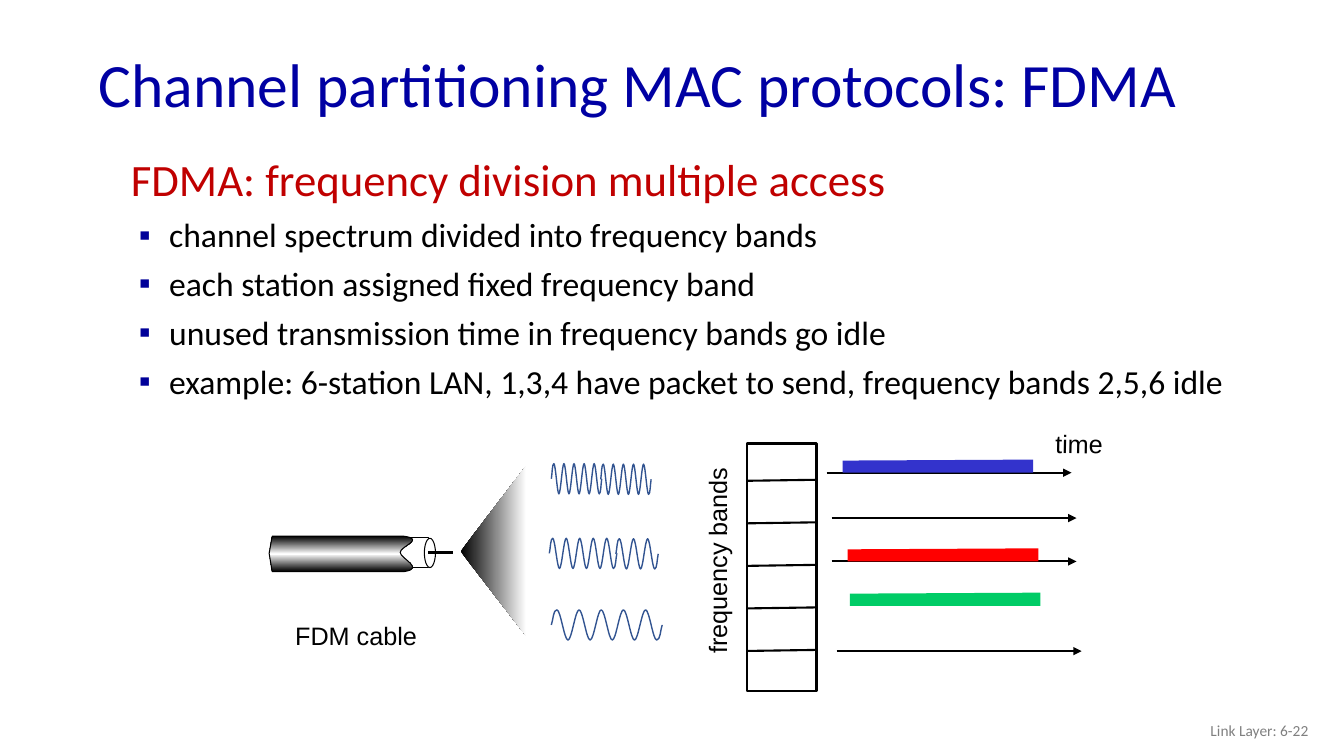
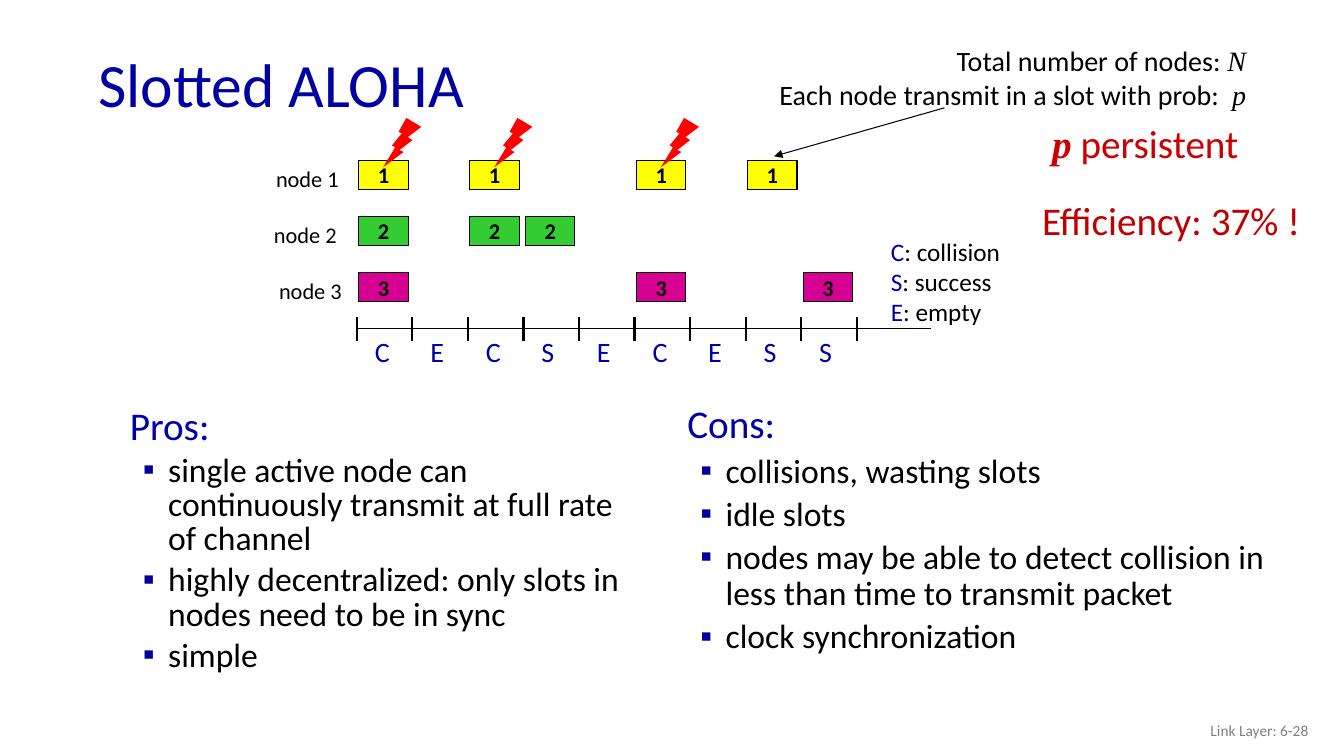
from copy import deepcopy
from dataclasses import dataclass

from lxml.etree import SubElement
from pptx import Presentation
from pptx.dml.color import RGBColor
from pptx.enum.shapes import MSO_CONNECTOR, MSO_SHAPE
from pptx.enum.text import MSO_ANCHOR, MSO_AUTO_SIZE, PP_ALIGN
from pptx.oxml.ns import qn
from pptx.util import Inches, Pt


@dataclass(frozen=True)
class Theme:
    title: str = "0000A3"
    blue: str = "0000A8"
    mark: str = "000099"
    red: str = "C00000"
    rose: str = "CC0000"
    gray: str = "808080"
    ink: str = "000000"
    paper: str = "FFFFFF"
    wave: str = "325491"
    sans: str = "Calibri"
    plain: str = "Arial"
    serif: str = "Times New Roman"
    huge: int = 44
    head: int = 32
    sub: int = 28
    body: int = 24
    note: int = 20
    label: int = 18
    node: int = 16
    foot: int = 11
    thin: float = 0.75
    firm: float = 1.5
    bold: float = 2.25


T = Theme()
CELL = Inches(0.1)  # all places below are columns and rows of this grid
WIDE, HIGH = 133.33, 75
FIT = {"word_wrap": False, "auto_size": MSO_AUTO_SIZE.SHAPE_TO_FIT_TEXT}
MID = {"word_wrap": True, "vertical_anchor": MSO_ANCHOR.MIDDLE}
WRAP = {"word_wrap": True}


def draw(page, kind, spots, fill=None, line=None, weight=T.thin, arrow=False, angle=0,
         bends=slice(0)):
    """Add a text box, line, path or preset shape.

    A list as fill is a gradient; bends picks the path points that form Bézier curves.
    """
    spots = [round(CELL * spot) for spot in spots]
    shapes = page.shapes
    if kind == "text":
        return shapes.add_textbox(*spots)
    if kind == "line":
        item = shapes.add_connector(MSO_CONNECTOR.STRAIGHT, *spots)
    elif kind == "path":
        points = list(zip(spots[::2], spots[1::2]))
        pen = shapes.build_freeform(*points[0], scale=1.0)
        pen.add_line_segments(points[1:], close=points[0] == points[-1])
        item = pen.convert_to_shape()
        marks = item._element.findall(".//" + qn("a:lnTo"))[bends]
        for first, second, last in zip(marks[::3], marks[1::3], marks[2::3]):
            first.tag = qn("a:cubicBezTo")
            for mark in second, last:
                first.append(mark[0])
                mark.getparent().remove(mark)
    else:
        item = shapes.add_shape(kind, *spots)
    props = item._element.spPr
    if isinstance(fill, list):
        item.fill.gradient()
        item.fill.gradient_angle = angle
        stops = props.find(".//" + qn("a:gsLst"))
        while len(stops) < len(fill):
            stops.append(deepcopy(stops[0]))
        for i, stop in enumerate(item.fill.gradient_stops):
            stop.color.rgb = RGBColor.from_string(fill[i])
            stop.position = i / (len(fill) - 1)
    elif fill:
        item.fill.solid()
        item.fill.fore_color.rgb = RGBColor.from_string(fill)
    elif kind != "line":
        item.fill.background()
    if line:
        item.line.color.rgb = RGBColor.from_string(line)
        item.line.width = Pt(weight)
    else:
        item.line.fill.background()
    if arrow:
        SubElement(props.find(qn("a:ln")), qn("a:tailEnd"), type="triangle")
    SubElement(props, qn("a:effectLst"))
    return item


def write(shape, paras, frame, **base):
    """Fill a shape with (style, run, ...) paragraphs; a run is (text, font values)."""
    box = shape.text_frame
    for key, value in frame.items():
        setattr(box, key, value)
    for i, (style, *runs) in enumerate(paras):
        para = box.paragraphs[0] if i == 0 else box.add_paragraph()
        props = para._p.get_or_add_pPr()
        for key, value in style.items():
            if key == "indent":
                left, first = value
                props.set("marL", str(Inches(left)))
                props.set("indent", str(Inches(first)))
            elif key not in ("bullet", "above"):
                setattr(para, key, value)
        if "above" in style:
            gap = SubElement(props, qn("a:spcBef"))
            SubElement(gap, qn("a:spcPct"), val=str(style["above"] * 1000))
        if "bullet" in style:
            tint = SubElement(props, qn("a:buClr"))
            SubElement(tint, qn("a:srgbClr"), val=T.mark)
            SubElement(props, qn("a:buFont"), typeface=T.plain)
            SubElement(props, qn("a:buChar"), char=style["bullet"])
        for words, look in runs:
            run = para.add_run()
            run.text = words
            font = {"name": T.sans, "color": T.ink, **base, **look}
            run.font.color.rgb = RGBColor.from_string(font.pop("color"))
            run.font.size = Pt(font.pop("size"))
            for key, value in font.items():
                setattr(run.font, key, value)


deck = Presentation()
deck.slide_width = round(CELL * WIDE)
deck.slide_height = CELL * HIGH

# Title, footer and lists of both slides
pages = [
    ("Channel partitioning MAC protocols: FDMA", "6-22", [
        ((12, 15.4, 114.4, 26.2), "FDMA: frequency division multiple access",
         T.head, T.red, 0.85, {"indent": (0.38, -0.3), "space_before": Pt(6)}, [
            "channel spectrum divided into frequency bands",
            "each station assigned fixed frequency band",
            "unused transmission time in frequency bands go idle",
            "example: 6-station LAN, 1,3,4 have packet to send, frequency bands 2,5,6 idle"]),
    ]),
    ("Slotted ALOHA", "6-28", [
        ((11.9, 40, 53, 35), "Pros:", T.sub, T.blue, 0.85,
         {"indent": (0.38, -0.25), "line_spacing": 0.85, "above": 20}, [
            "single active node can continuously transmit at full rate of channel",
            "highly decentralized: only slots in nodes need to be in sync",
            "simple"]),
        ((67.2, 39.7, 61, 30), "Cons:", T.sub, T.blue, 0.9,
         {"indent": (0.38, -0.25), "line_spacing": 0.9, "above": 20}, [
            "collisions, wasting slots",
            "idle slots",
            "nodes may be able to detect collision in less than time to transmit packet",
            "clock synchronization"]),
    ]),
]
made = []
for title, number, lists in pages:
    page = deck.slides.add_slide(deck.slide_layouts[6])
    made.append(page)
    write(draw(page, "text", (8.8, 3.8, 115, 9.8)),
          [({"line_spacing": 0.9}, (title, {}))], MID, size=T.huge, color=T.title)
    write(draw(page, "text", (100.8, 70.5, 30, 4)),
          [({"alignment": PP_ALIGN.RIGHT}, ("Link Layer: " + number, {}))],
          MID, size=T.foot, color=T.gray)
    for spots, head, size, color, pitch, style, items in lists:
        top = {"indent": (0.38, -0.38), "line_spacing": pitch, "above": 20}
        paras = [(top, (head, {"size": size, "color": color}))]
        paras += [({"bullet": "▪", **style}, (item, {})) for item in items]
        write(draw(page, "text", spots), paras, WRAP, size=T.body)

fdma, aloha = made

# FDMA: stack of bands with time arrows and packets
draw(fdma, MSO_SHAPE.RECTANGLE, (74.1, 44, 6.9, 24.6), T.paper, T.ink, T.firm)
for i in range(5):
    y = 47.7 + 4.22 * i
    draw(fdma, "line", (74.1, y, 80.9, y - 0.1), line=T.ink, weight=T.firm)
for x, y in (82, 46.9), (82.5, 51.4), (82.5, 55.7), (83, 64.6):
    draw(fdma, "line", (x, y, x + 24.3, y), line=T.ink, weight=T.firm, arrow=True)
for x, y, fill in (83.6, 46.9, "3333CC"), (84.1, 55.7, "FF0000"), (84.3, 60.1, "00CC66"):
    end = x + 18.9
    draw(fdma, "path", (x, y, x, y - 1.2, end, y - 1.3, end, y), fill)
for words, spots, turn in [
    ("frequency bands", (60.9, 53.6, 20.5, 4), 270),
    ("time", (103.7, 42, 6.7, 4), 1.1),
    ("FDM cable", (28.3, 61, 14.1, 4), 0),
]:
    label = draw(fdma, "text", spots)
    label.rotation = turn
    write(label, [({}, (words, {}))], FIT, size=T.label, name=T.plain)

# FDMA: cable, cone and waves
draw(fdma, "path", (52.2, 46.2, 45.7, 54.7, 52.2, 63.1, 52.2, 46.2), [T.ink, T.paper])
draw(fdma, MSO_SHAPE.RECTANGLE, (39.6, 53.3, 2.9, 3), T.paper, T.ink)
cable = (27, 53.2, 26.7, 54.9, 27, 56.7, 40.1, 56.7,
         42.2, 56.4, 39.7, 55.4, 39.7, 54.8,
         39.7, 54.2, 42.2, 53.5, 40.1, 53.2, 27, 53.2)
draw(fdma, "path", cable, [T.ink, T.paper, T.ink], T.ink, angle=90, bends=slice(3, 9))
draw(fdma, MSO_SHAPE.OVAL, (42.1, 53.4, 1.1, 2.9), T.paper, T.ink)
draw(fdma, "line", (42.5, 54.8, 44.9, 54.8), line=T.ink, weight=T.bold)
for x, y, span, peaks in [(54.7, 62, 11, 10), (54.7, 47.5, 5, 10), (59.6, 47.55, 5, 10),
                          (54.5, 54.9, 6.7, 10), (61.1, 54.95, 4.2, 6)]:
    step = span / peaks
    curve = [x, y, x + step / 6, y - 0.5]
    for i in range(peaks):
        peak = x + step * (i + 0.5)
        level = y + (1.5 if i % 2 else -1.5)
        curve += [peak - step / 3, level, peak, level, peak + step / 3, level]
    curve += [x + span - step / 6, y + 0.5, x + span, y]
    draw(fdma, "path", curve, line=T.wave, weight=1, bends=slice(None))

# ALOHA: packets of each node on a row of slots
SLOT, LEFT = 5.51, 35.4
rows = [("1", "FFFF00", 26.4, (0, 2, 5, 7)),
        ("2", "33CC33", 26.2, (0, 2, 3)),
        ("3", "D60093", 26.7, (0, 5, 8))]
tight = {"margin_left": 0, "margin_right": 0, "margin_top": 0, "margin_bottom": 0, **MID}
for i, (node, fill, x, slots) in enumerate(rows):
    y = 15.9 + 5.57 * i
    write(draw(aloha, "text", (x, y, 8.3, 3.7)), [({}, ("node " + node, {}))], FIT, size=T.node)
    for slot in slots:
        block = draw(aloha, MSO_SHAPE.RECTANGLE,
                     (LEFT + 0.2 + SLOT * slot, y, 4.9, 2.9), fill, T.ink)
        write(block, [({"alignment": PP_ALIGN.CENTER}, (node, {}))],
              tight, size=T.node, bold=True)
draw(aloha, "line", (LEFT, 32.6, 92.4, 32.6), line=T.ink)
for i in range(10):
    x = LEFT + SLOT * i
    draw(aloha, "line", (x, 31.45, x, 33.8), line=T.ink, weight=T.firm)
for i, state in enumerate("CECSECESS"):
    x = LEFT + SLOT * i
    write(draw(aloha, "text", (x + 0.8, 32.7, 3.5, 4.4)), [({}, (state, {}))],
          FIT, size=T.note, color=T.blue)
    if state == "C":
        bolt = draw(aloha, MSO_SHAPE.LIGHTNING_BOLT, (x + 2.6, 11.7, 3.8, 4.9), "FF0000")
        bolt._element.spPr.find(qn("a:xfrm")).set("flipH", "1")

# ALOHA: legend and remarks
legend = [({}, (word[0].upper(), {"color": T.blue}), (": " + word, {}))
          for word in ("collision", "success", "empty")]
write(draw(aloha, "text", (87.4, 22.9, 13, 10.1)), legend, FIT, size=T.label)
draw(aloha, "line", (93.7, 10.7, 76.8, 15.5), line=T.ink, arrow=True)
right = {"alignment": PP_ALIGN.RIGHT}
math = {"name": T.serif, "italic": True}
write(draw(aloha, "text", (75.9, 3.85, 48.7, 7.7)),
      [(right, ("Total number of nodes: ", {}), ("N", math)),
       (right, ("Each node transmit in a slot with prob:  ", {}), ("p", math))],
      FIT, size=T.note)
write(draw(aloha, "text", (103.4, 11.3, 20.8, 5.7)),
      [({}, ("p", {"bold": True, **math}), (" persistent", {}))],
      FIT, size=T.sub, color=T.rose)
write(draw(aloha, "text", (101, 18.95, 29.7, 5.7)),
      [({"indent": (0.14, 0)}, ("Efficiency: 37% !", {}))], WRAP, size=T.sub, color=T.red)

deck.save("out.pptx")
